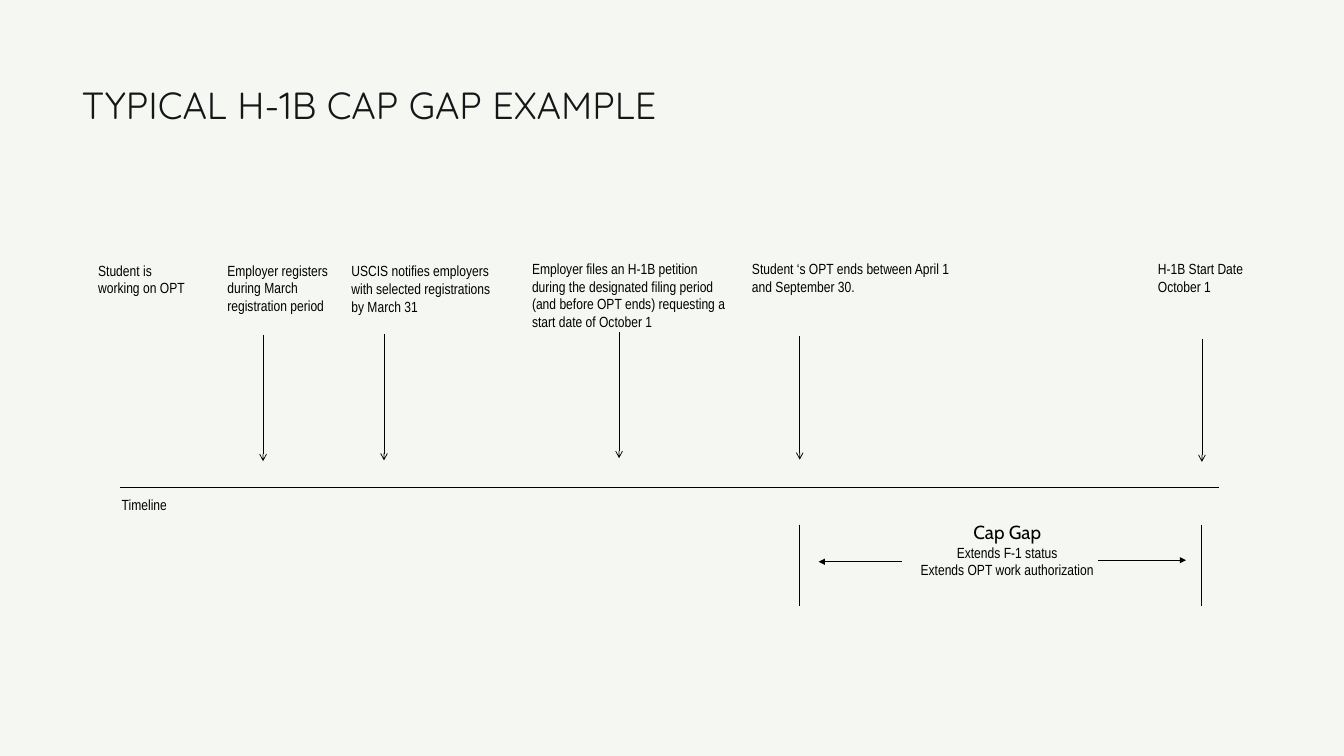
from lxml import etree
from pptx import Presentation
from pptx import util as u
from pptx.dml.color import RGBColor
from pptx.enum import shapes, text
from pptx.oxml.ns import qn

COLORS = {"background": "F5F7F2", "title": "151618", "ink": "000000"}
BODY_FONT = "Arial Narrow"

# Milestones: left, top, width, height, paragraphs
LABELS = [
    (1.2, 3.41, 1.45, 0.57, ["Student is working on OPT"]),
    (2.91, 3.41, 1.64, 0.81, ["Employer registers during March registration period"]),
    (4.55, 3.42, 2.18, 0.81,
     ["USCIS notifies employers with selected registrations by March 31"]),
    (6.94, 3.39, 2.77, 1.04,
     ["Employer files an H-1B petition",
      "during the designated filing period (and before OPT ends) "
      "requesting a start date of October 1"]),
    (9.85, 3.39, 2.83, 0.57, ["Student ‘s OPT ends between April 1 and September 30."]),
    (15.22, 3.39, 1.36, 0.57, ["H-1B Start Date", "October 1"]),
    (1.51, 6.51, 1.45, 0.34, ["Timeline"]),
]

# Arrows down to the timeline: x, top, bottom
MILESTONE_ARROWS = [
    (3.48, 4.43, 6.1),
    (5.08, 4.42, 6.09),
    (8.19, 4.39, 6.06),
    (10.58, 4.45, 6.08),
    (15.9, 4.48, 6.11),
]


def rgb(name):
    return RGBColor.from_string(COLORS[name])


def set_font(paragraph, size, name=BODY_FONT, color="ink"):
    paragraph.font.size = u.Pt(size)
    paragraph.font.name = name
    paragraph.font.color.rgb = rgb(color)


def add_title(slide, wording):
    title = slide.shapes.title
    title.left, title.top = u.Inches(1.05), u.Inches(0.83)
    title.width, title.height = u.Inches(15.02), u.Inches(0.88)
    frame = title.text_frame
    frame.text = wording
    frame.word_wrap = True
    frame.auto_size = text.MSO_AUTO_SIZE.NONE
    frame.vertical_anchor = text.MSO_ANCHOR.BOTTOM
    frame.margin_left = frame.margin_right = u.Inches(0.03)
    frame.margin_top = frame.margin_bottom = u.Inches(0.03)
    paragraph = frame.paragraphs[0]
    paragraph.alignment = text.PP_ALIGN.LEFT
    paragraph.line_spacing = 1.1
    set_font(paragraph, 36, "Quicksand", "title")


def add_label(slide, left, top, width, height, lines, align=text.PP_ALIGN.LEFT):
    box = slide.shapes.add_textbox(
        u.Inches(left), u.Inches(top), u.Inches(width), u.Inches(height))
    frame = box.text_frame
    frame.word_wrap = True
    frame.text = "\n".join(lines)
    for paragraph in frame.paragraphs:
        paragraph.alignment = align
        set_font(paragraph, 14)
    return frame


def add_line(slide, x1, y1, x2, y2, width=0.75, arrowhead=None):
    line = slide.shapes.add_connector(
        shapes.MSO_CONNECTOR.STRAIGHT,
        u.Inches(x1), u.Inches(y1), u.Inches(x2), u.Inches(y2))
    line.line.width = u.Pt(width)
    line.line.color.rgb = rgb("ink")
    if arrowhead:
        outline = line.line._get_or_add_ln()
        etree.SubElement(outline, qn("a:tailEnd"), type=arrowhead)
    etree.SubElement(line._element.spPr, qn("a:effectLst"))


def add_cap_gap(slide):
    frame = add_label(
        slide, 11.86, 6.84, 2.93, 1.18,
        ["Cap Gap", "Extends F-1 status", "Extends OPT work authorization"],
        text.PP_ALIGN.CENTER)
    set_font(frame.paragraphs[0], 18, "Cabin")
    # Limits of the gap and the arrows reaching towards them
    for x in (10.58, 15.89):
        add_line(slide, x, 6.94, x, 8.02, 1)
    add_line(slide, 11.93, 7.43, 10.83, 7.43, 1, "triangle")
    add_line(slide, 14.53, 7.41, 15.69, 7.41, 1, "triangle")


def main():
    presentation = Presentation()
    presentation.slide_width = u.Inches(17.78)
    presentation.slide_height = u.Inches(10)
    slide = presentation.slides.add_slide(presentation.slide_layouts[5])
    slide.background.fill.solid()
    slide.background.fill.fore_color.rgb = rgb("background")

    add_title(slide, "TYPICAL H-1B CAP GAP EXAMPLE")

    # Timeline with its milestones
    add_line(slide, 1.59, 6.45, 16.12, 6.45)
    for label in LABELS:
        add_label(slide, *label)
    for x, top, bottom in MILESTONE_ARROWS:
        add_line(slide, x, top, x, bottom, arrowhead="arrow")

    add_cap_gap(slide)
    presentation.save("out.pptx")


if __name__ == "__main__":
    main()
